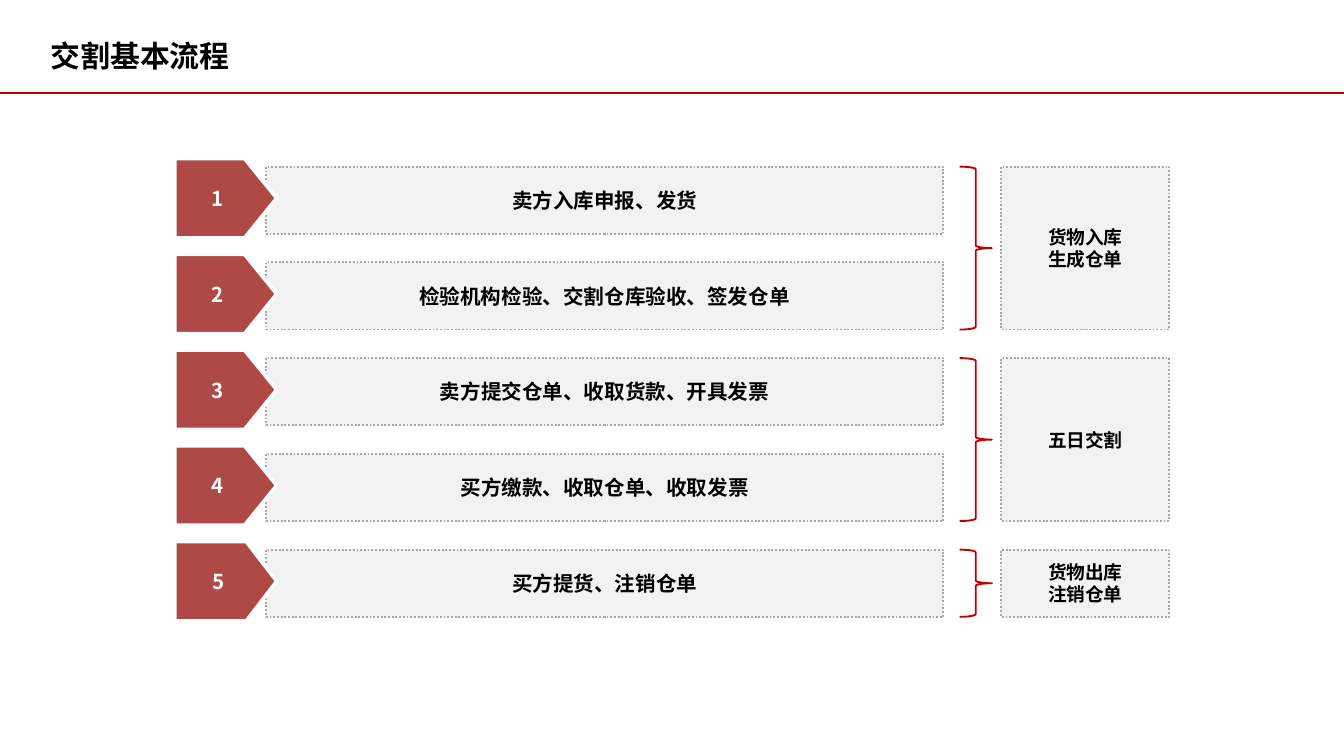
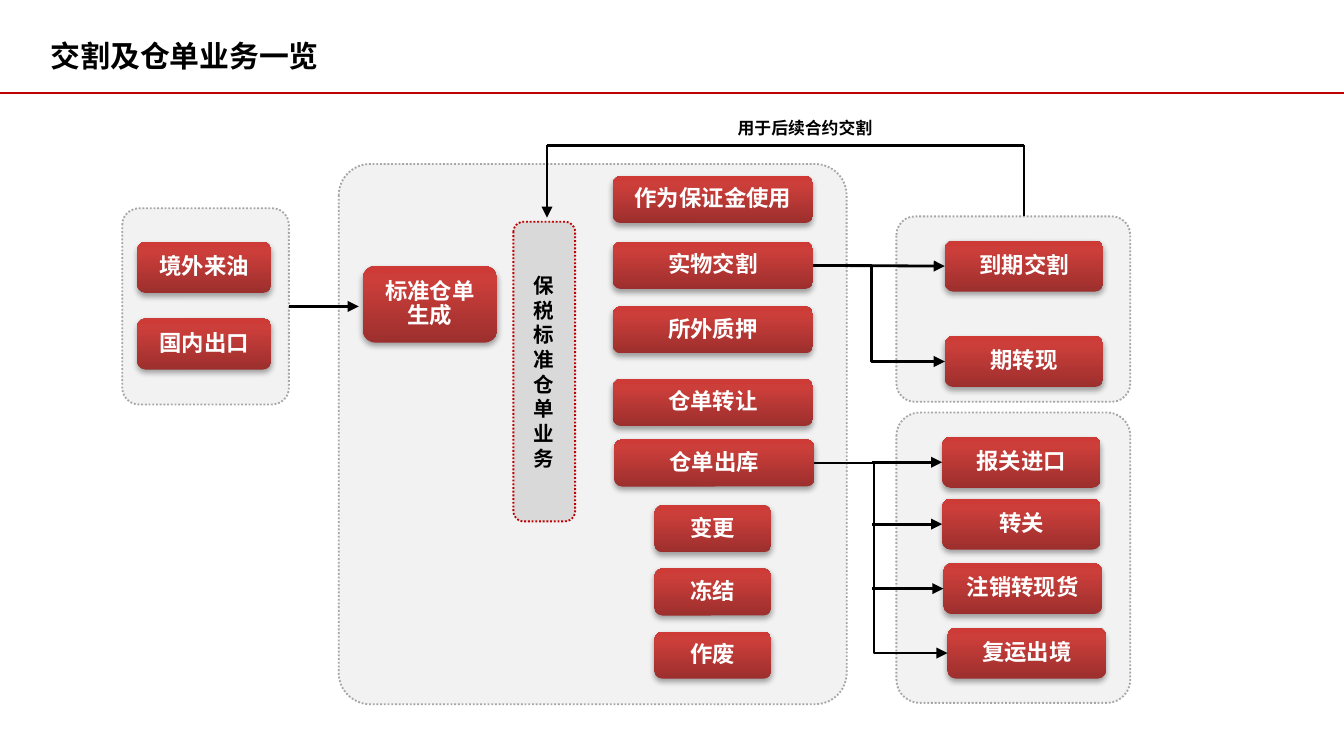
from copy import deepcopy
from dataclasses import dataclass

from lxml import etree
from pptx import Presentation
from pptx.dml.color import RGBColor
from pptx.enum import dml, shapes, text
from pptx.oxml.ns import qn
from pptx.util import Inches, Pt


@dataclass(frozen=True)
class Theme:
    font: str = "Noto Sans CJK SC"
    black: RGBColor = RGBColor(0x00, 0x00, 0x00)
    white: RGBColor = RGBColor(0xFF, 0xFF, 0xFF)
    red: RGBColor = RGBColor(0xC0, 0x00, 0x00)
    brick: RGBColor = RGBColor(0xAE, 0x49, 0x46)
    pale: RGBColor = RGBColor(0xF2, 0xF2, 0xF2)
    silver: RGBColor = RGBColor(0xD9, 0xD9, 0xD9)
    border: RGBColor = RGBColor(0xA6, 0xA6, 0xA6)
    button_stops: tuple = ((0, "9C2F2D"), (0.8, "CB3E3A"), (1, "CE3B37"))
    title: int = 16
    button: int = 12
    body: int = 11
    stage: int = 10
    label: int = 9


theme = Theme()
Preset = shapes.MSO_SHAPE
Align = text.PP_ALIGN
Anchor = text.MSO_ANCHOR


def write(shape, words, size, color=theme.black, align=Align.CENTER, anchor=Anchor.MIDDLE,
          inset=(0.1, 0.05), wrap=True, line_spacing=None, after_percent=None):
    frame = shape.text_frame
    frame.word_wrap = wrap
    frame.vertical_anchor = anchor
    frame.margin_left = frame.margin_right = Inches(inset[0])
    frame.margin_top = frame.margin_bottom = Inches(inset[1])
    frame.text = words
    for paragraph in frame.paragraphs:
        paragraph.alignment = align
        paragraph.line_spacing = line_spacing
        font = paragraph.runs[0].font
        if after_percent:
            settings = font._element.getparent().getparent().get_or_add_pPr()
            after = etree.SubElement(settings, qn("a:spcAft"))
            etree.SubElement(after, qn("a:spcPct"), val=str(after_percent * 1000))
        font.size, font.bold, font.name = Pt(size), True, theme.font
        font.color.rgb = color
        etree.SubElement(font._element, qn("a:ea"), typeface=theme.font)


def draw_line(slide, start, end, color=theme.black, weight=1.5, arrow=True, bend=None):
    """Each end is a point in inches or a shape: lines leave its right and enter its left side."""
    begin_shape = None if isinstance(start, tuple) else start
    end_shape = None if isinstance(end, tuple) else end
    kind = shapes.MSO_CONNECTOR.ELBOW if bend else shapes.MSO_CONNECTOR.STRAIGHT
    first = (0, 0) if begin_shape else start
    last = (0, 0) if end_shape else end
    line = slide.shapes.add_connector(kind, *map(Inches, first + last))
    if begin_shape:
        line.begin_connect(begin_shape, 3)
    if end_shape:
        line.end_connect(end_shape, 1)
    line.line.color.rgb = color
    line.line.width = Pt(weight)
    properties = line.element.spPr
    if arrow:
        etree.SubElement(properties.find(qn("a:ln")), qn("a:tailEnd"), type="triangle")
    if bend:
        guides = properties.find(qn("a:prstGeom")).find(qn("a:avLst"))
        etree.SubElement(guides, qn("a:gd"), name="adj1", fmla=f"val {round(bend * 100000)}")
    etree.SubElement(properties, qn("a:effectLst"))


deck = Presentation()
deck.slide_width = Inches(10)
deck.slide_height = deck.slide_width * 9 // 16

# Header shared by both slides
pages = []
for heading in ("交割基本流程", "交割及仓单业务一览"):
    page = deck.slides.add_slide(deck.slide_layouts[6])
    draw_line(page, (0.0, 0.69), (10.0, 0.69), color=theme.red, weight=1, arrow=False)
    title = page.shapes.add_textbox(*map(Inches, (0.28, 0.14, 9.37, 0.55)))
    write(title, heading, theme.title, align=Align.LEFT)
    pages.append(page)
process, overview = pages

# Dotted boxes: process steps and stages, overview panels
steps = ("卖方入库申报、发货", "检验机构检验、交割仓库验收、签发仓单", "卖方提交仓单、收取货款、开具发票",
         "买方缴款、收取仓单、收取发票", "买方提货、注销仓单")
stages = ((0, 1, "货物入库\n生成仓单"), (2, 3, "五日交割"), (4, 4, "货物出库\n注销仓单"))
step_height = 0.5
pitch = (4.09 - 1.24) / (len(steps) - 1)
step_tops = [1.24 + pitch * row for row in range(len(steps))]
stage_spans = [(step_tops[a], step_tops[b] - step_tops[a] + step_height) for a, b, _ in stages]

dotted = [(process, (1.98, top, 5.04, step_height), None, step, theme.body)
          for top, step in zip(step_tops, steps)]
dotted += [(process, (7.45, top, 1.25, height), None, stage[2], theme.stage)
           for (top, height), stage in zip(stage_spans, stages)]
dotted += [(overview, place, corner, "", None) for place, corner in (
    ((2.52, 1.22, 3.78, 4.02), 0.062),
    ((6.67, 1.61, 1.74, 1.38), 0.1),
    ((6.67, 3.07, 1.74, 2.16), 0.1),
    ((0.91, 1.55, 1.24, 1.46), 0.1),
)]
dotted.append((overview, (3.82, 1.65, 0.46, 2.23), 0.167, "保税标准仓单业务", theme.body))

for page, place, corner, words, size in dotted:
    preset = Preset.ROUNDED_RECTANGLE if corner else Preset.RECTANGLE
    box = page.shapes.add_shape(preset, *map(Inches, place))
    box.shadow.inherit = False
    is_column = corner and words
    box.fill.solid()
    box.fill.fore_color.rgb = theme.silver if is_column else theme.pale
    box.line.color.rgb = theme.red if is_column else theme.border
    box.line.width = Pt(1)
    box.line.dash_style = dml.MSO_LINE.ROUND_DOT
    if corner:
        box.adjustments[0] = corner
    if words:
        write(box, words, size)

# Process: numbers and braces
for number, top in enumerate(step_tops, start=1):
    marker = process.shapes.add_shape(Preset.PENTAGON, *map(Inches, (1.3, top - 0.06, 0.76, 0.59)))
    marker.shadow.inherit = False
    marker.adjustments[0] = 0.383 if number == len(steps) else 0.405
    marker.fill.solid()
    marker.fill.fore_color.rgb = theme.brick
    marker.line.color.rgb = theme.white
    marker.line.width = Pt(2)
    write(marker, str(number), theme.body, color=theme.white, inset=(0, 0))

for top, height in stage_spans:
    brace = process.shapes.add_shape(Preset.RIGHT_BRACE, *map(Inches, (7.14, top, 0.24, height)))
    brace.shadow.inherit = False
    brace.fill.background()
    brace.line.color.rgb = theme.red
    brace.line.width = Pt(1)

# Overview: buttons in groups of equal width and height
button_groups = (
    (1.0, 0.38, ((1.02, 1.8, "境外来油"), (1.02, 2.37, "国内出口"))),
    (1.0, 0.57, ((2.7, 1.98, "标准仓单生成"),)),
    (1.49, 0.35, ((4.56, 1.31, "作为保证金使用"), (4.56, 1.8, "实物交割"), (4.56, 2.28, "所外质押"),
                  (4.56, 2.82, "仓单转让"), (4.57, 3.27, "仓单出库"))),
    (0.87, 0.35, ((4.87, 3.76, "变更"), (4.87, 4.23, "冻结"), (4.87, 4.7, "作废"))),
    (1.18, 0.38, ((7.03, 1.79, "到期交割"), (7.03, 2.5, "期转现"), (7.01, 3.25, "报关进口"),
                  (7.01, 3.71, "转关"), (7.02, 4.19, "注销转现货"), (7.05, 4.67, "复运出境"))),
)
buttons = {}
for width, height, members in button_groups:
    for left, top, words in members:
        # The soft shadow under a button is the one its theme style gives
        button = overview.shapes.add_shape(Preset.ROUNDED_RECTANGLE,
                                           *map(Inches, (left, top, width, height)))
        button.fill.gradient()
        button.fill.gradient_angle = 90
        stop_list = button.element.spPr.find(".//" + qn("a:gsLst"))
        stop_list.append(deepcopy(stop_list[-1]))
        for stop, (position, shade) in zip(button.fill.gradient_stops, theme.button_stops):
            stop.position = position
            stop.color.rgb = RGBColor.from_string(shade)
        button.line.fill.background()
        write(button, words, theme.button, color=theme.white, inset=(0.12, 0.12),
              line_spacing=0.9, after_percent=35)
        buttons[words] = button

# Overview: flow into the bonded warrants and back again
draw_line(overview, (2.15, 2.28), (2.67, 2.28))
return_path = ((7.62, 1.61), (7.62, 1.08), (4.07, 1.08), (4.07, 1.62))
for start, end in zip(return_path, return_path[1:]):
    draw_line(overview, start, end, arrow=end == return_path[-1])
return_label = overview.shapes.add_textbox(*map(Inches, (5.39, 0.83, 1.21, 0.25)))
write(return_label, "用于后续合约交割", theme.label, align=Align.LEFT, anchor=Anchor.TOP, wrap=False)

# Overview: branches to the outcomes
draw_line(overview, buttons["实物交割"], buttons["到期交割"])
draw_line(overview, buttons["实物交割"], buttons["期转现"], bend=0.446)
draw_line(overview, buttons["仓单出库"], buttons["复运出境"], bend=0.447)
for outcome in ("报关进口", "转关", "注销转现货"):
    target = buttons[outcome]
    draw_line(overview, (6.49, (target.top + target.height / 2) / Inches(1)), target)

deck.save("out.pptx")
